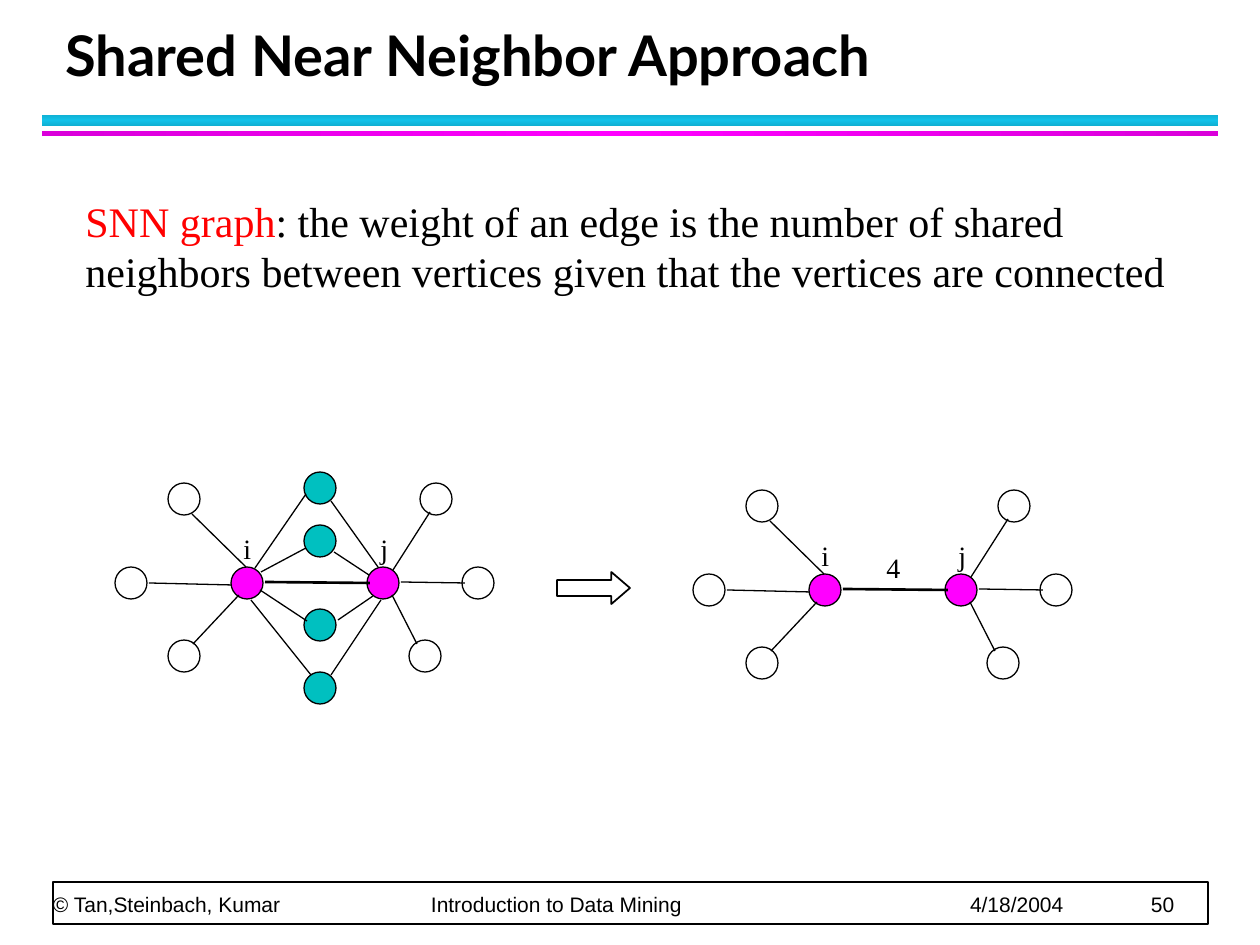
"""Build a slide that shows how a shared near neighbor graph weights an edge."""
import copy
from typing import NamedTuple, Optional

import lxml.etree
import pptx
import pptx.dml.color
import pptx.enum.shapes
import pptx.enum.text
import pptx.oxml.ns
import pptx.util

RGBColor = pptx.dml.color.RGBColor
BLACK = RGBColor(0x00, 0x00, 0x00)
WHITE = RGBColor(0xFF, 0xFF, 0xFF)
RED = RGBColor(0xFF, 0x00, 0x00)
MAGENTA = RGBColor(0xFF, 0x00, 0xFF)
DARK_MAGENTA = RGBColor(0xDA, 0x00, 0xDA)
TEAL = RGBColor(0x00, 0xC0, 0xC0)
CYAN = RGBColor(0x12, 0xC2, 0xE9)
DARK_CYAN = RGBColor(0x10, 0xB0, 0xD3)

SERIF = "Times New Roman"
PX_PER_INCH = 126
NODE_SIZE = 32
GRAPH_SHIFT = (578, 7)
SHAPE = pptx.enum.shapes.MSO_SHAPE
ANCHOR = pptx.enum.text.MSO_ANCHOR


class Node(NamedTuple):
    x: int
    y: int
    fill: Optional[RGBColor] = None
    shared: bool = False


class Edge(NamedTuple):
    x1: int
    y1: int
    x2: int
    y2: int
    shared: bool = False
    width: float = 0.75


NODES = [
    Node(247, 583, MAGENTA), Node(383, 583, MAGENTA),
    *[Node(320, y, TEAL, True) for y in (488, 541, 625, 688)],
    Node(184, 656), Node(131, 583), Node(184, 499),
    Node(436, 499), Node(425, 656), Node(478, 583),
]
EDGES = [
    Edge(193, 644, 239, 595), Edge(149, 583, 232, 585), Edge(192, 514, 246, 567),
    Edge(265, 582, 370, 583, width=1.5), Edge(401, 582, 465, 583),
    Edge(417, 644, 392, 595), Edge(393, 570, 430, 512),
    Edge(261, 572, 306, 548, True), Edge(260, 590, 307, 621, True),
    Edge(311, 675, 251, 600, True), Edge(255, 568, 306, 494, True),
    Edge(338, 620, 373, 596, True), Edge(331, 675, 381, 600, True),
    Edge(369, 575, 334, 552, True), Edge(378, 567, 331, 501, True),
]


def px(length: float) -> int:
    """Turn px into EMU."""
    return round(length * 914400 / PX_PER_INCH)


def add_shape(page, kind, left, top, width, height, fill=None, line: Optional[float] = None):
    """Draw a preset shape without shadow."""
    shape = page.shapes.add_shape(kind, px(left), px(top), px(width), px(height))
    shape.shadow.inherit = False
    if fill is None:
        shape.fill.background()
    else:
        shape.fill.solid()
        shape.fill.fore_color.rgb = fill
    if line is None:
        shape.line.fill.background()
    else:
        shape.line.color.rgb = BLACK
        shape.line.width = pptx.util.Pt(line)
    return shape


def add_band(page, top: int, height: int, edge: RGBColor, middle: RGBColor, angle: int) -> None:
    """Draw a rule whose colour changes to the middle and back."""
    band = add_shape(page, SHAPE.RECTANGLE, 42, top, 1176, height)
    band.fill.gradient()
    band.fill.gradient_angle = angle
    stop_list = band._element.spPr.find(".//" + pptx.oxml.ns.qn("a:gsLst"))
    stop_list.append(copy.deepcopy(stop_list[0]))
    for stop, position, color in zip(band.fill.gradient_stops, (0, 0.5, 1), (edge, middle, edge)):
        stop.position = position
        stop.color.rgb = color


def add_text(page, spans, left, top, width, height, *, size=16, font=SERIF, bold=False,
             anchor=ANCHOR.TOP, inset=True, leading=None, space_before=0, tabs=()) -> None:
    """Write one paragraph of (text, colour) spans in a box."""
    box = page.shapes.add_textbox(px(left), px(top), px(width), px(height))
    frame = box.text_frame
    frame.word_wrap = True
    frame.vertical_anchor = anchor
    if not inset:
        frame.margin_left = frame.margin_right = frame.margin_top = frame.margin_bottom = 0
    para = frame.paragraphs[0]
    if leading:
        para.line_spacing = pptx.util.Pt(leading)
    qn = pptx.oxml.ns.qn
    properties = para._p.get_or_add_pPr()
    if space_before:
        before = lxml.etree.SubElement(properties, qn("a:spcBef"))
        lxml.etree.SubElement(before, qn("a:spcPct"), val=str(space_before * 1000))
    if tabs:
        tab_list = lxml.etree.SubElement(properties, qn("a:tabLst"))
        for tab in tabs:
            lxml.etree.SubElement(tab_list, qn("a:tab"), pos=str(px(tab)), algn="l")
    for text, color in spans:
        span = para.add_run()
        span.text = text
        span.font.size = pptx.util.Pt(size)
        span.font.name = font
        span.font.bold = bold
        span.font.color.rgb = color


def add_edge(page, edge: Edge, dx: int, dy: int) -> None:
    """Draw an edge of a graph."""
    line = page.shapes.add_connector(
        pptx.enum.shapes.MSO_CONNECTOR.STRAIGHT,
        px(edge.x1 + dx), px(edge.y1 + dy), px(edge.x2 + dx), px(edge.y2 + dy))
    line.line.color.rgb = BLACK
    line.line.width = pptx.util.Pt(edge.width)
    lxml.etree.SubElement(line._element.spPr, pptx.oxml.ns.qn("a:effectLst"))


def add_graph(page, dx: int, dy: int, with_shared: bool) -> None:
    """Draw the graph around i and j, with or without their shared neighbors."""
    for node in NODES:
        if with_shared or not node.shared:
            add_shape(page, SHAPE.OVAL, node.x - NODE_SIZE / 2 + dx, node.y - NODE_SIZE / 2 + dy,
                      NODE_SIZE, NODE_SIZE, node.fill, 0.75)
    for name, left in (("i", 231), ("j", 368)):
        add_text(page, [(name, BLACK)], left + dx, 525 + dy, 42, 47, space_before=50)
    for edge in EDGES:
        if with_shared or not edge.shared:
            add_edge(page, edge, dx, dy)


def main() -> None:
    """Build and save the deck."""
    deck = pptx.Presentation()
    deck.slide_width, deck.slide_height = px(1260), px(945)
    page = deck.slides.add_slide(deck.slide_layouts[6])

    add_band(page, 115, 11, DARK_CYAN, CYAN, 90)
    add_band(page, 131, 5, DARK_MAGENTA, MAGENTA, 0)
    add_shape(page, SHAPE.RECTANGLE, 53, 882, 1155, 42, WHITE, 1)
    footer = "\t".join(["© Tan,Steinbach, Kumar", "Introduction to Data Mining", "4/18/2004", "50"])
    add_text(page, [(footer, BLACK)], 53, 882, 1153, 35, size=12, font="Arial",
             anchor=ANCHOR.BOTTOM, inset=False, leading=20, tabs=(378, 917, 1098))

    add_graph(page, 0, 0, True)
    add_graph(page, *GRAPH_SHIFT, False)
    add_text(page, [("4", BLACK)], 874, 544, 47, 47, space_before=50)

    definition = (": the weight of an edge is the number of shared neighbors between vertices "
                  "given that the vertices are connected")
    add_text(page, [("SNN graph", RED), (definition, BLACK)], 73, 189, 1113, 113,
             size=24, space_before=50)
    add_text(page, [("Shared Near Neighbor Approach", BLACK)], 53, 21, 1142, 73,
             size=32, font="Lato", bold=True, anchor=ANCHOR.BOTTOM, leading=36)
    arrow = add_shape(page, SHAPE.RIGHT_ARROW, 557, 572, 73, 32, line=1)
    arrow.adjustments[1] = 0.58
    deck.save("out.pptx")


if __name__ == "__main__":
    main()
